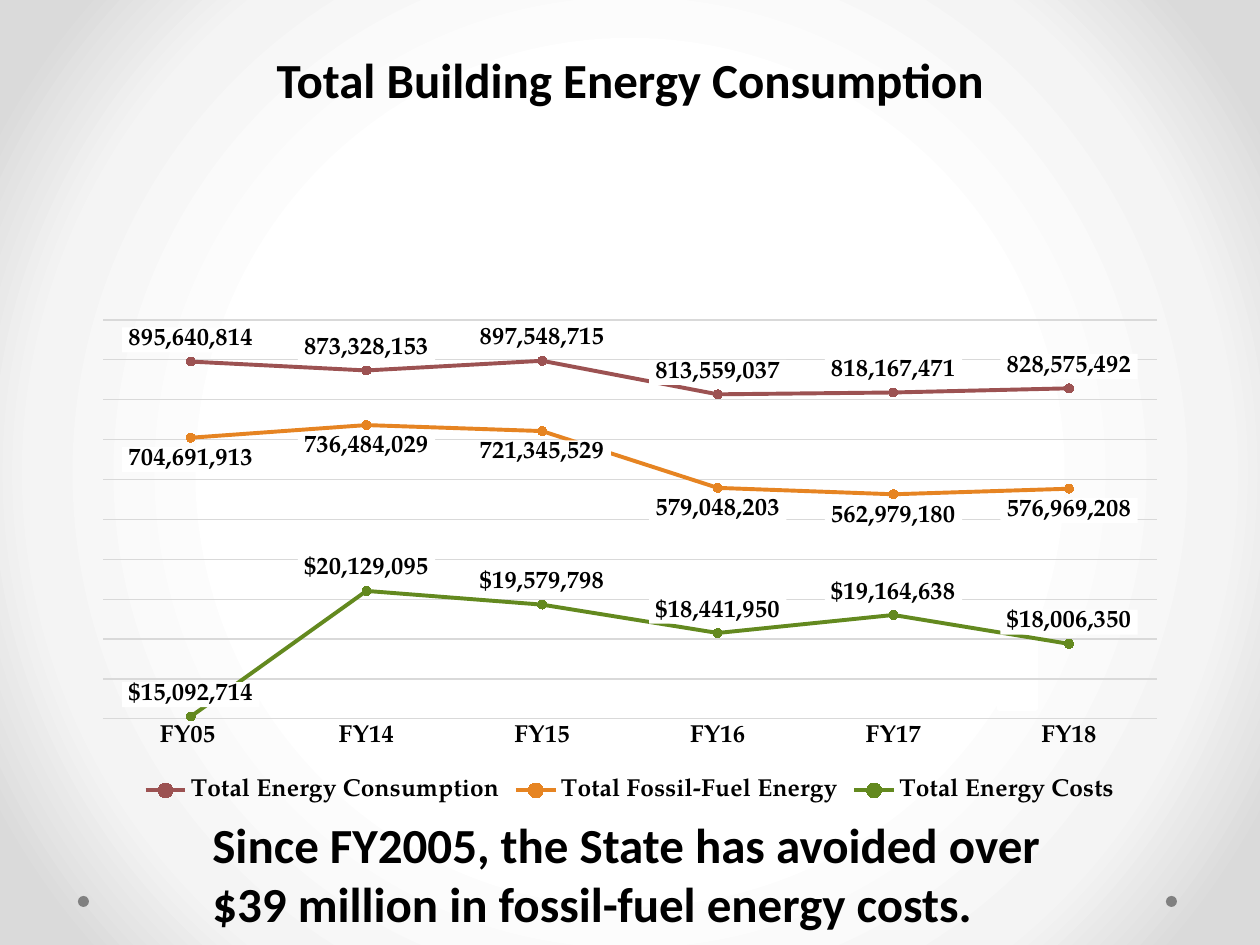
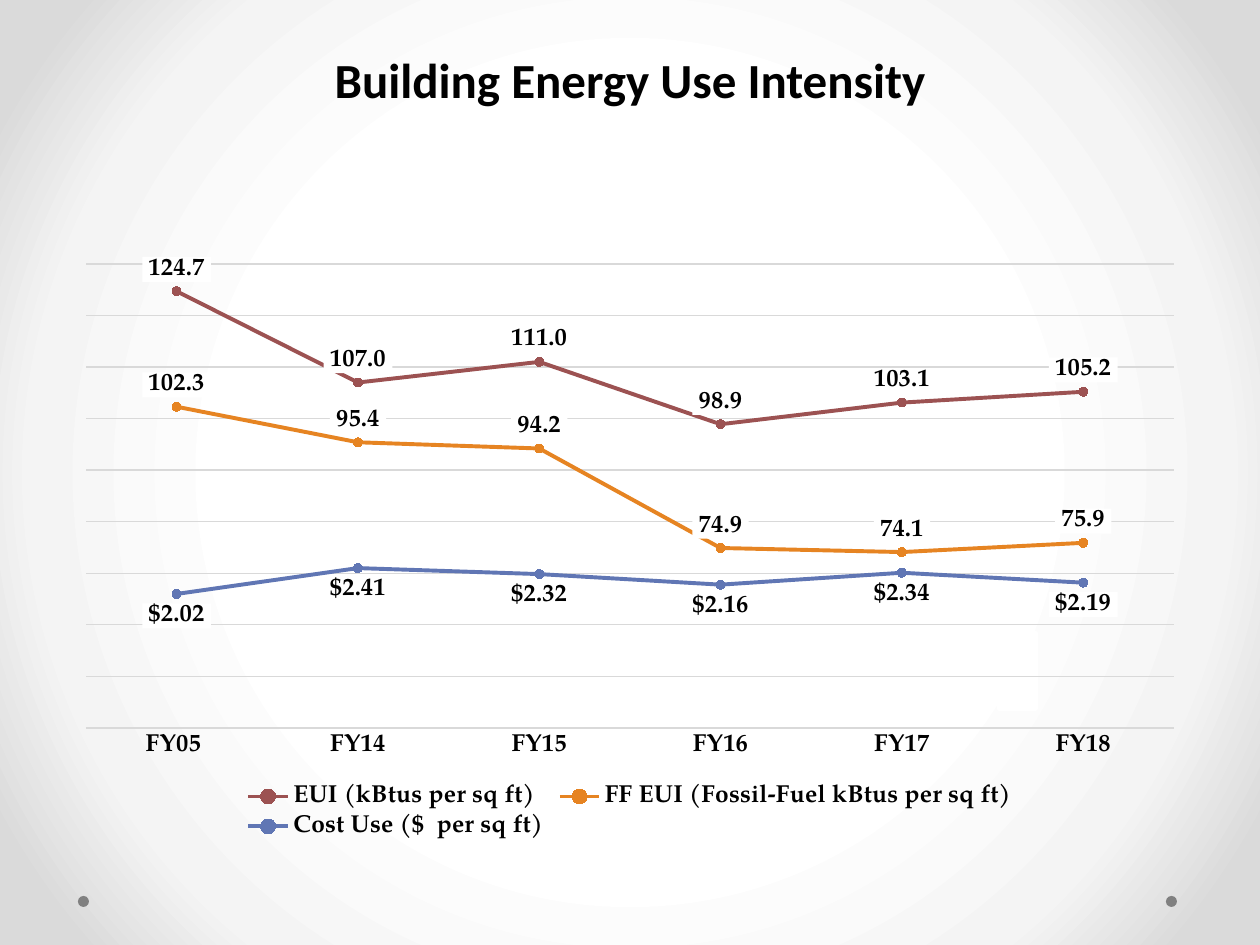
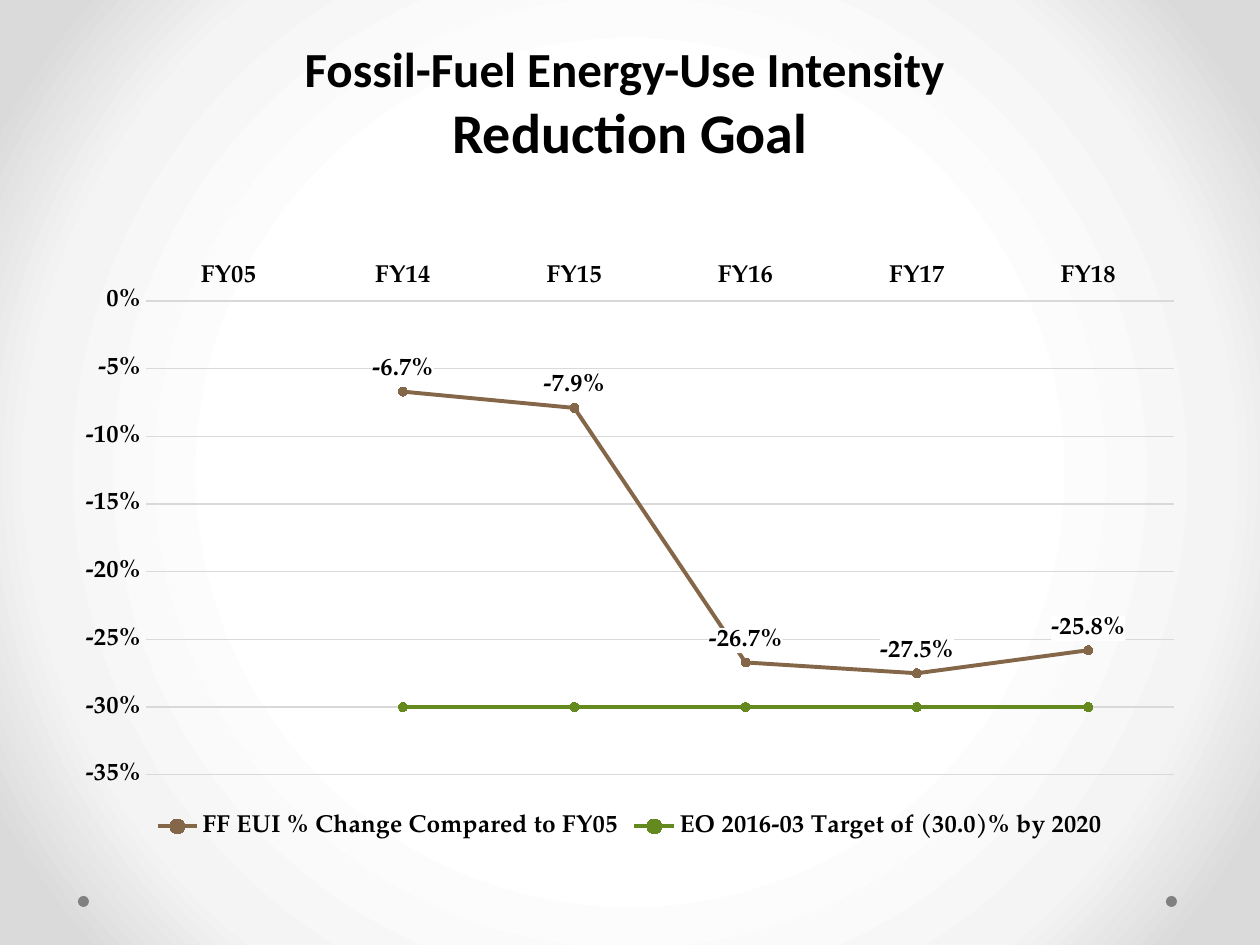
import copy

from lxml import etree
from pptx import Presentation
from pptx import util as u
from pptx.chart import axis as axes
from pptx.chart import data as chart_data
from pptx.dml.color import RGBColor
from pptx.enum import chart as kinds, shapes, text
from pptx.oxml import parse_xml
from pptx.oxml.ns import nsdecls, qn

SCALE = 914400 / 126  # EMU per px
COLORS = {
    "black": "000000", "white": "FFFFFF", "mist": "F4F4F4", "silver": "DADADA",
    "dot": "808080", "grid": "D9D9D9", "red": "9C5252", "orange": "E68422",
    "green": "63891F", "blue": "6076B4", "brown": "846648",
}
TITLE_FONT, CHART_FONT = "Calibri", "TeX Gyre Pagella"
YEARS = ["FY05 ", "FY14", "FY15", "FY16", "FY17", "FY18"]
COUNT, DECIMAL = "_(* #,##0_)", "_(* #,##0.0_)"
DOLLARS, CENTS = '_("$"* #,##0_)', '_("$"* #,##0.00_)'
ABOVE, BELOW = kinds.XL_LABEL_POSITION.ABOVE, kinds.XL_LABEL_POSITION.BELOW

# Places are left, top, width, height in px; scales are minimum, maximum, step.
# Series are name, colour, number format, label position, values.
PAGES = [
    {
        "title": [("Total Building Energy Consumption", 28)],
        "title_place": (63, 0, 1134, 158), "anchor": text.MSO_ANCHOR.MIDDLE,
        "masks": True,
        "note": "Since FY2005, the State has avoided over "
                "$39 million in fossil-fuel energy costs.",
        "chart": (63, 257, 1134, 551), "plot": (103, 320, 1054, 399),
        "scale": (0, 1000000000, 100000000), "right": (15000000, 31000000),
        "series": [
            ("Total Energy Consumption", "red", COUNT, ABOVE,
             [895640814, 873328153, 897548715, 813559037, 818167471, 828575492]),
            ("Total Fossil-Fuel Energy", "orange", COUNT, BELOW,
             [704691913, 736484029, 721345529, 579048203, 562979180, 576969208]),
            ("Total Energy Costs", "green", DOLLARS, ABOVE,
             [15092714, 20129095, 19579798, 18441950, 19164638, 18006350]),
        ],
    },
    {
        "title": [("Building Energy Use Intensity", 28)],
        "title_place": (63, 0, 1134, 158), "anchor": text.MSO_ANCHOR.MIDDLE,
        "masks": True,
        "chart": (63, 252, 1134, 592), "plot": (86, 264, 1088, 464),
        "scale": (40, 130, 10), "right": (0, 7),
        "series": [
            ("EUI (kBtus per sq ft)", "red", DECIMAL, ABOVE,
             [124.7, 107, 111, 98.9, 103.1, 105.2]),
            ("FF EUI (Fossil-Fuel kBtus per sq ft)", "orange", DECIMAL, ABOVE,
             [102.3, 95.4, 94.2, 74.9, 74.1, 75.9]),
            ("Cost Use ($  per sq ft)", "blue", CENTS, BELOW,
             [2.02, 2.41, 2.32, 2.16, 2.34, 2.19]),
        ],
    },
    {
        "title": [("Fossil-Fuel Energy-Use Intensity ", 28), ("Reduction Goal", 32)],
        "title_place": (63, 31, 1134, 140), "anchor": text.MSO_ANCHOR.BOTTOM,
        "chart": (63, 252, 1134, 592), "plot": (146, 301, 1028, 474),
        "scale": (-0.35, 0, 0.05), "axis_format": "0%",
        "series": [
            ("FF EUI % Change Compared to FY05", "brown", "0.0%", ABOVE,
             [None, -0.067, -0.079, -0.267, -0.275, -0.258]),
            ("EO 2016-03 Target of (30.0)% by 2020", "green", None, None,
             [None] + [-0.3] * 5),
        ],
    },
]


def px(*lengths):
    return [u.Emu(round(length * SCALE)) for length in lengths]


def style(font, name=CHART_FONT, size=14, color="black"):
    font.name, font.size, font.bold = name, u.Pt(size), True
    font.color.rgb = RGBColor.from_string(COLORS[color])


deck = Presentation()
deck.slide_width, deck.slide_height = px(1260, 945)
master = deck.slide_master

# Shared background: a soft round gradient
master.background.fill.solid()
stops = "".join(
    f'<a:gs pos="{place * 1000}"><a:srgbClr val="{COLORS[name]}"/></a:gs>'
    for place, name in [(50, "white"), (76, "mist"), (92, "silver")])
gradient = parse_xml(
    f'<a:gradFill {nsdecls("a")} rotWithShape="1"><a:gsLst>{stops}</a:gsLst>'
    '<a:path path="circle"><a:fillToRect l="50000" t="50000" r="50000" b="50000"/>'
    '</a:path></a:gradFill>')
solid = next(master.element.iter(qn("a:solidFill")))
solid.getparent().replace(solid, gradient)

for number, content in enumerate(PAGES):
    page = deck.slides.add_slide(deck.slide_layouts[5])

    # Shared footer dots, placed once on the master
    if number == 0:
        for left in (78, 1166):
            dot = page.shapes.add_shape(shapes.MSO_SHAPE.OVAL, *px(left, 896, 11, 11))
            dot.shadow.inherit = False
            dot.fill.solid()
            dot.fill.fore_color.rgb = RGBColor.from_string(COLORS["dot"])
            dot.line.fill.background()
            master.shapes.element.append(dot.element)

    # Title
    title = page.shapes.title
    title.left, title.top, title.width, title.height = px(*content["title_place"])
    frame = title.text_frame
    frame.auto_size = text.MSO_AUTO_SIZE.NONE
    frame.vertical_anchor = content["anchor"]
    para = frame.paragraphs[0]
    para.alignment = text.PP_ALIGN.CENTER
    for index, (words, size) in enumerate(content["title"]):
        if index:
            para.add_line_break()
        span = para.add_run()
        span.text = words
        style(span.font, TITLE_FONT, size)

    # White masks behind the chart
    if content.get("masks"):
        for top, height in [(353, 239), (633, 76)]:
            mask = page.shapes.add_shape(
                shapes.MSO_SHAPE.RECTANGLE, *px(999, top, 37, height))
            mask.shadow.inherit = False
            mask.fill.solid()
            mask.fill.fore_color.rgb = RGBColor.from_string(COLORS["white"])
            mask.line.color.rgb = RGBColor.from_string(COLORS["white"])
            mask.line.width = u.Pt(2.25)

    # Closing statement
    if "note" in content:
        box = page.shapes.add_textbox(*px(200, 808, 857, 131))
        box.text_frame.word_wrap = True
        span = box.text_frame.paragraphs[0].add_run()
        span.text = content["note"]
        style(span.font, TITLE_FONT, 28)

    # Chart and legend
    table = chart_data.CategoryChartData()
    table.categories = YEARS
    for name, color, label_format, position, values in content["series"]:
        table.add_series(name, values)
    chart = page.shapes.add_chart(
        kinds.XL_CHART_TYPE.LINE_MARKERS, *px(*content["chart"]), table).chart
    chart.has_title = False
    chart.has_legend = True
    chart.legend.position = kinds.XL_LEGEND_POSITION.BOTTOM
    chart.legend.include_in_layout = False
    years, amounts = chart.category_axis, chart.value_axis
    for font in (chart.font, chart.legend.font,
                 years.tick_labels.font, amounts.tick_labels.font):
        style(font)

    # Axes
    for axis in (years, amounts):
        axis.major_tick_mark = axis.minor_tick_mark = kinds.XL_TICK_MARK.NONE
    for line in (years.format.line, amounts.major_gridlines.format.line):
        line.color.rgb = RGBColor.from_string(COLORS["grid"])
        line.width = u.Pt(0.75)
    amounts.format.line.fill.background()
    amounts.minimum_scale, amounts.maximum_scale, amounts.major_unit = content["scale"]
    if "axis_format" in content:
        amounts.tick_labels.number_format = content["axis_format"]
        amounts.tick_labels.number_format_is_linked = False
        years.tick_label_position = kinds.XL_TICK_LABEL_POSITION.HIGH
    else:
        amounts.tick_label_position = kinds.XL_TICK_LABEL_POSITION.NONE

    # Series and labels
    plot = chart.plots[0]
    plot.vary_by_categories = False
    for series, row in zip(plot.series, content["series"]):
        name, color, label_format, position, values = row
        shade = RGBColor.from_string(COLORS[color])
        series.smooth = False
        series.format.line.color.rgb = shade
        series.format.line.width = u.Pt(2.25)
        series.marker.style = kinds.XL_MARKER_STYLE.CIRCLE
        series.marker.size = 5
        series.marker.format.fill.solid()
        series.marker.format.fill.fore_color.rgb = shade
        series.marker.format.line.color.rgb = shade
        if label_format:
            labels = series.data_labels
            labels.show_value = True
            labels.position = position
            labels.number_format = label_format
            labels.number_format_is_linked = False
            style(labels.font)

    # White backing for the labels
    area = next(chart.element.iter(qn("c:plotArea")))
    for label_text in area.findall(
            "/".join(map(qn, ("c:lineChart", "c:ser", "c:dLbls", "c:txPr")))):
        label_text.addprevious(parse_xml(
            f'<c:spPr {nsdecls("c", "a")}><a:solidFill>'
            f'<a:srgbClr val="{COLORS["white"]}"/></a:solidFill></c:spPr>'))

    # Plot area, as fractions of the chart
    for old in area.findall(qn("c:layout")):
        area.remove(old)
    layout = etree.Element(qn("c:layout"))
    manual = etree.SubElement(layout, qn("c:manualLayout"))
    left, top, width, height = content["chart"]
    x, y, w, h = content["plot"]
    for tag, value in [
            ("layoutTarget", "inner"), ("xMode", "edge"), ("yMode", "edge"),
            ("x", (x - left) / width), ("y", (y - top) / height),
            ("w", w / width), ("h", h / height)]:
        etree.SubElement(manual, qn(f"c:{tag}"), val=str(value))
    area.insert(0, layout)

    # Last series on a right axis without labels
    if "right" in content:
        left_lines = area.find(qn("c:lineChart"))
        right_lines = copy.deepcopy(left_lines)
        left_lines.remove(left_lines.findall(qn("c:ser"))[-1])
        for series in right_lines.findall(qn("c:ser"))[:-1]:
            right_lines.remove(series)
        left_lines.addnext(right_lines)
        left_values = area.find(qn("c:valAx"))
        right_values = copy.deepcopy(left_values)
        right_years = copy.deepcopy(area.find(qn("c:catAx")))
        left_values.addnext(right_values)
        right_values.addnext(right_years)
        ids = ("5001", "5002")
        for element, own, other in [(right_years, *ids), (right_values, *ids[::-1])]:
            element.find(qn("c:axId")).set("val", own)
            element.find(qn("c:crossAx")).set("val", other)
        for element, own in zip(right_lines.findall(qn("c:axId")), ids):
            element.set("val", own)
        right_values.find(qn("c:axPos")).set("val", "r")
        costs, hidden_years = axes.ValueAxis(right_values), axes.CategoryAxis(right_years)
        costs.has_major_gridlines = False
        costs.minimum_scale, costs.maximum_scale = content["right"]
        costs.major_unit = None
        hidden_years.visible = False
        hidden_years.crosses = kinds.XL_AXIS_CROSSES.MAXIMUM

deck.save("out.pptx")
